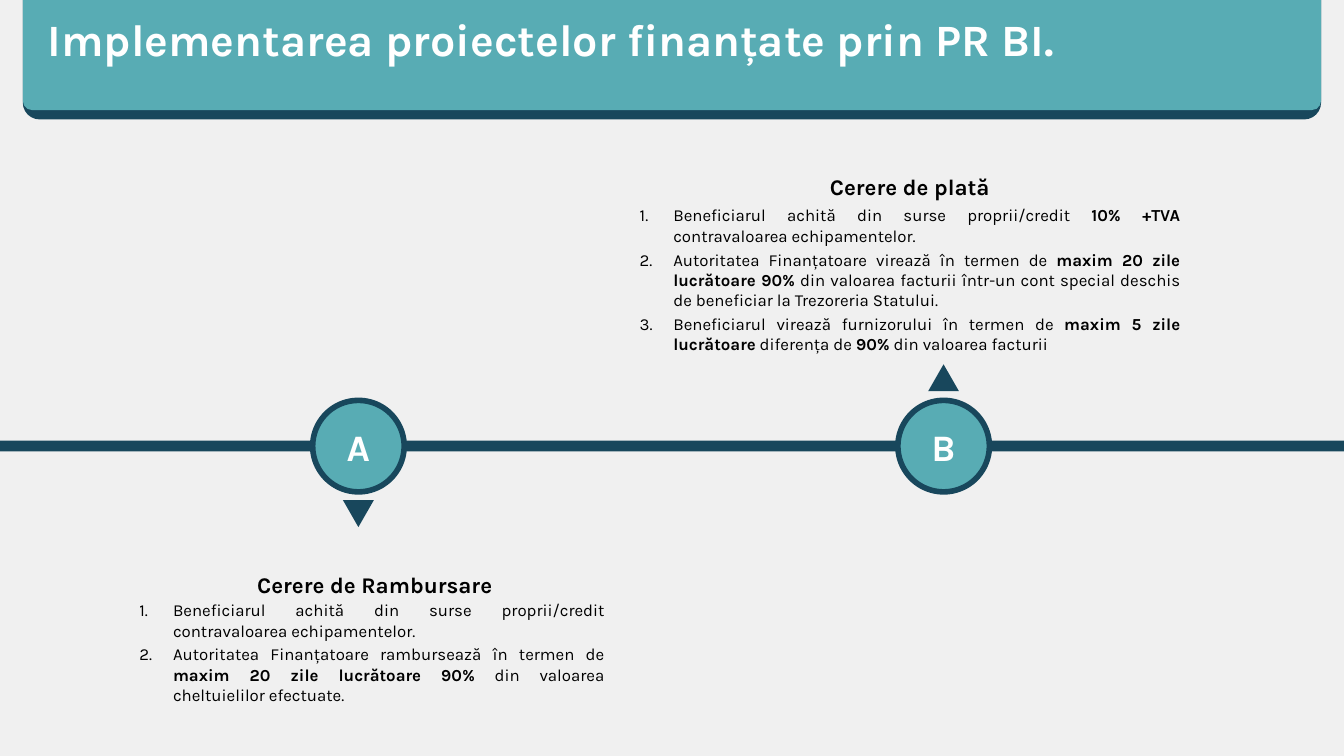
from lxml import etree
from pptx import Presentation
from pptx.dml.color import RGBColor
from pptx.enum import shapes, text
from pptx.oxml.ns import qn
from pptx.util import Pt

NAVY, TEAL, PALE, WHITE, BLACK = "18475C", "58ACB4", "F0F0F0", "FFFFFF", "000000"
KINDS = shapes.MSO_SHAPE


def add_filled(kind, left, top, width, height, colour):
    shape = slide.shapes.add_shape(kind, Pt(left), Pt(top), Pt(width), Pt(height))
    shape.shadow.inherit = False
    shape.fill.solid()
    shape.fill.fore_color.rgb = RGBColor.from_string(colour)
    shape.line.fill.background()
    return shape


def write(shape, paragraphs, size, colour, align, bold=False, numbered=False):
    """Fill a shape with paragraphs; parts between ** marks are bold."""
    frame = shape.text_frame
    frame.margin_left = frame.margin_right = frame.margin_top = frame.margin_bottom = 0
    frame.word_wrap = True
    frame.auto_size = text.MSO_AUTO_SIZE.NONE
    frame.vertical_anchor = text.MSO_ANCHOR.MIDDLE
    for number, words in enumerate(paragraphs):
        paragraph = frame.add_paragraph() if number else frame.paragraphs[0]
        if numbered:
            properties = paragraph._p.get_or_add_pPr()
            properties.set("marL", str(Pt(18)))
            properties.set("indent", str(Pt(-18)))
            etree.SubElement(properties, qn("a:buFont"), typeface="+mj-lt")
            etree.SubElement(properties, qn("a:buAutoNum"), type="arabicPeriod")
        paragraph.alignment = align
        paragraph.space_before = Pt(2 if number else 0)
        for part, wording in enumerate(words.split("**")):
            run = paragraph.add_run()
            run.text = wording
            run.font.name = "Karla"
            run.font.size = Pt(size)
            run.font.bold = bold or part % 2 == 1
            run.font.color.rgb = RGBColor.from_string(colour)


deck = Presentation()
deck.slide_width, deck.slide_height = Pt(720), Pt(405)
slide = deck.slides.add_slide(deck.slide_layouts.get_by_name("Comparison"))
slide.background.fill.solid()
slide.background.fill.fore_color.rgb = RGBColor.from_string(PALE)

# Banner, behind the title
title = slide.shapes.title
for height, radius, colour in [(64, 9, NAVY), (59, 5, TEAL)]:
    banner = add_filled(KINDS.ROUND_2_SAME_RECTANGLE, 12.25, 0, 695.5, height, colour)
    banner.adjustments[0] = 0
    banner.adjustments[1] = radius / height
    title._element.addprevious(banner._element)

title.left, title.top, title.width, title.height = Pt(25.5), Pt(9.4), Pt(669), Pt(26)
write(title, ["Implementarea proiectelor finanțate prin PR BI."], 24, WHITE,
      text.PP_ALIGN.LEFT, bold=True)
title.text_frame.paragraphs[0].line_spacing = 0.9

# Timeline with its two stops
axis = 239
add_filled(KINDS.RECTANGLE, 0, axis - 2.9, 720, 5.8, NAVY)
diameter, arrow_width, arrow_height = 49, 16.5, 14.4
for letter, centre, arrow_top, turn in [("A", 192, 268, 180), ("B", 505.5, 195.2, 0)]:
    stop = add_filled(KINDS.OVAL, centre - diameter / 2, axis - diameter / 2,
                      diameter, diameter, TEAL)
    stop.line.color.rgb = RGBColor.from_string(NAVY)
    stop.line.width = Pt(3)
    write(stop, [letter], 20, WHITE, text.PP_ALIGN.CENTER, bold=True)
    arrow = add_filled(KINDS.ISOSCELES_TRIANGLE, centre - arrow_width / 2, arrow_top,
                       arrow_width, arrow_height, NAVY)
    arrow.rotation = turn

# Heading and steps of each kind of request: (placeholder, box, paragraphs)
headings = [
    (1, (76.3, 306, 249, 14.4), ["Cerere de Rambursare"]),
    (3, (342.7, 93, 289.5, 14.4), ["Cerere de plată"]),
]
steps = [
    (2, (74.7, 321, 249, 57), [
        "Beneficiarul achită din surse proprii/credit contravaloarea echipamentelor.",
        "Autoritatea Finanțatoare rambursează în termen de "
        "**maxim 20 zile lucrătoare 90%** din valoarea cheltuielilor efectuate.",
    ]),
    (4, (342.7, 109.5, 289.5, 80.6), [
        "Beneficiarul achită din surse proprii/credit **10% +TVA **"
        "contravaloarea echipamentelor.",
        "Autoritatea Finanțatoare virează în termen de **maxim 20 zile lucrătoare 90%** "
        "din valoarea facturii într-un cont special deschis de beneficiar la "
        "Trezoreria Statului.",
        "Beneficiarul virează furnizorului în termen de **maxim 5 zile lucrătoare** "
        "diferența de **90%** din valoarea facturii",
    ]),
]
for index, box, paragraphs in headings + steps:
    holder = slide.placeholders[index]
    holder.left, holder.top, holder.width, holder.height = map(Pt, box)
    if index in (1, 3):
        write(holder, paragraphs, 12, BLACK, text.PP_ALIGN.CENTER, bold=True)
    else:
        write(holder, paragraphs, 9, BLACK, text.PP_ALIGN.JUSTIFY, numbered=True)

deck.save("out.pptx")
